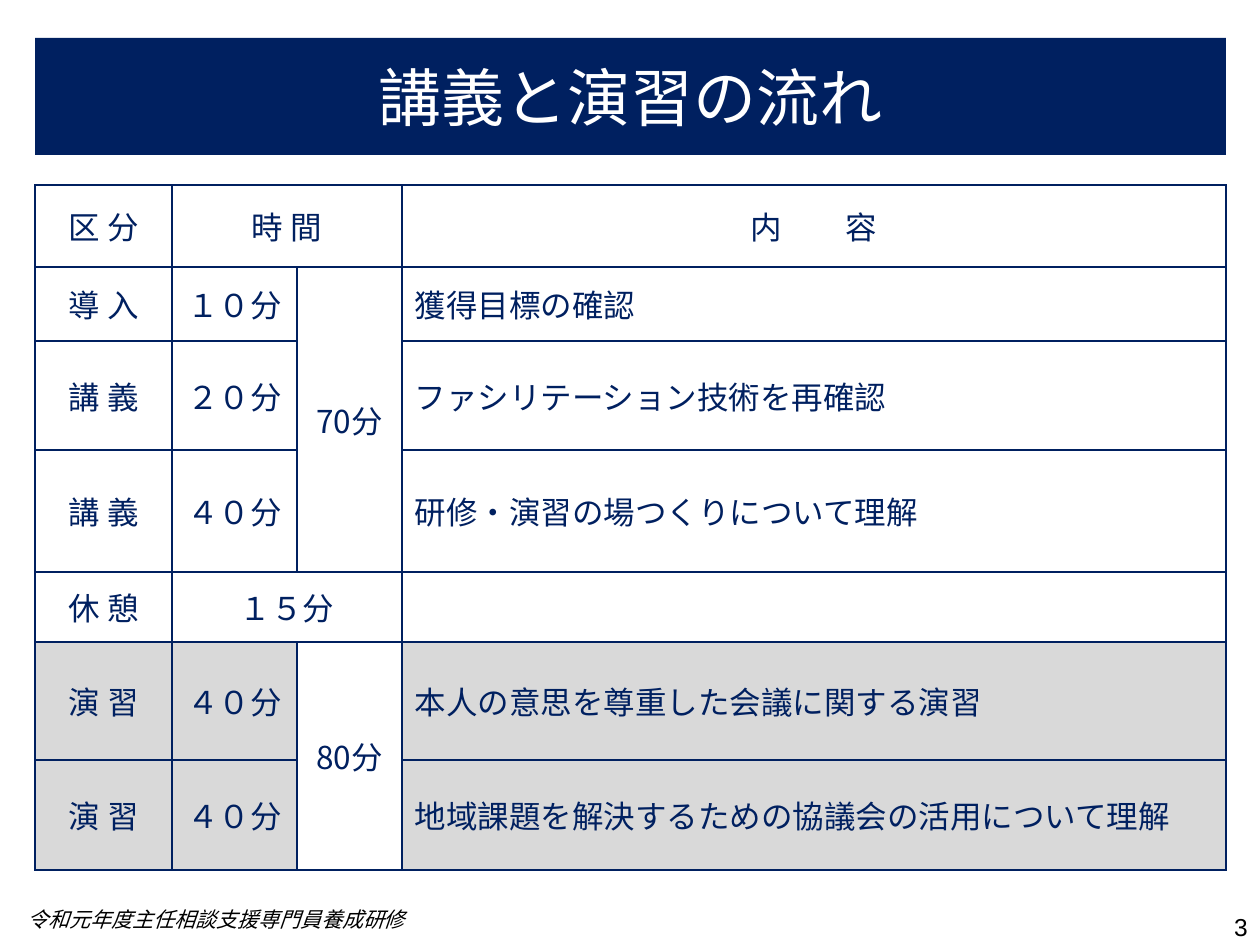
import pptx
import pptx.util
import pptx.dml.color
import pptx.enum.text
import pptx.oxml.ns
import lxml.etree

PX = 914400 / 126  # EMU per px
COLORS = {"navy": "002060", "white": "FFFFFF", "black": "000000", "gray": "D9D9D9"}
JAPANESE = "Noto Sans CJK JP"
ALIGN = pptx.enum.text.PP_ALIGN
MIDDLE = pptx.enum.text.MSO_ANCHOR.MIDDLE

COLUMNS = [137, 125, 105, 824]
ROWS = [82, 74, 109, 122, 70, 118, 110]
SCHEDULE = [
    ["区 分", "時 間", "", "内　　容"],
    ["導 入", "１０分", "70分", "獲得目標の確認"],
    ["講 義", "２０分", "", "ファシリテーション技術を再確認"],
    ["講 義", "４０分", "", "研修・演習の場つくりについて理解"],
    ["休 憩", "１５分", "", ""],
    ["演 習", "４０分", "80分", "本人の意思を尊重した会議に関する演習"],
    ["演 習", "４０分", "", "地域課題を解決するための協議会の活用について理解"],
]
MERGES = [((0, 1), (0, 2)), ((1, 2), (3, 2)), ((4, 1), (4, 2)), ((5, 2), (6, 2))]
TOTAL_COLUMN, CONTENT_COLUMN = 2, 3
FIRST_EXERCISE_ROW = 5


def emu(px):
    return round(px * PX)


def rgb(name):
    return pptx.dml.color.RGBColor.from_string(COLORS[name])


def write(frame, text, size, color, align=ALIGN.LEFT, font=JAPANESE, italic=False):
    frame.text = text
    paragraph = frame.paragraphs[0]
    paragraph.alignment = align
    for run in paragraph.runs:
        run.font.size = pptx.util.Pt(size)
        run.font.name = font
        run.font.bold = False
        run.font.italic = italic
        run.font.color.rgb = rgb(color)
        # East Asian typeface, which follows the Latin one
        properties = run._r.get_or_add_rPr()
        lxml.etree.SubElement(properties, pptx.oxml.ns.qn("a:ea"), typeface=font)


def add_borders(cell, color, width):
    properties = cell._tc.get_or_add_tcPr()
    for side in ("lnL", "lnR", "lnT", "lnB"):
        line = lxml.etree.SubElement(properties, pptx.oxml.ns.qn(f"a:{side}"),
                                     w=str(int(pptx.util.Pt(width))))
        fill = lxml.etree.SubElement(line, pptx.oxml.ns.qn("a:solidFill"))
        lxml.etree.SubElement(fill, pptx.oxml.ns.qn("a:srgbClr"), val=COLORS[color])


def place_title(slide, left, top, width, height):
    title = slide.shapes.title
    title.left, title.top = emu(left), emu(top)
    title.width, title.height = emu(width), emu(height)
    title.fill.solid()
    title.fill.fore_color.rgb = rgb("navy")
    title.text_frame.vertical_anchor = MIDDLE
    write(title.text_frame, "講義と演習の流れ", 36, "white", ALIGN.CENTER)


def add_schedule(slide, left, top):
    table = slide.shapes.add_table(
        len(ROWS), len(COLUMNS), emu(left), emu(top),
        emu(sum(COLUMNS)), emu(sum(ROWS))).table
    for column, width in zip(table.columns, COLUMNS):
        column.width = emu(width)
    for row, height in zip(table.rows, ROWS):
        row.height = emu(height)
    for start, end in MERGES:
        table.cell(*start).merge(table.cell(*end))

    for r, texts in enumerate(SCHEDULE):
        for c, text in enumerate(texts):
            cell = table.cell(r, c)
            add_borders(cell, "navy", 1)
            # Exercise rows are shaded, apart from their total time
            if r >= FIRST_EXERCISE_ROW and c != TOTAL_COLUMN:
                cell.fill.solid()
                cell.fill.fore_color.rgb = rgb("gray")
            else:
                cell.fill.background()
            cell.vertical_anchor = MIDDLE
            is_content = c == CONTENT_COLUMN and r > 0
            write(cell.text_frame, text, 18, "navy",
                  ALIGN.LEFT if is_content else ALIGN.CENTER)


def add_note(slide, left, top, width, height, text, size, **style):
    note = slide.shapes.add_textbox(emu(left), emu(top), emu(width), emu(height))
    note.text_frame.word_wrap = True
    write(note.text_frame, text, size, "black", **style)


def main():
    presentation = pptx.Presentation()
    presentation.slide_width, presentation.slide_height = emu(1260), emu(945)
    slide = presentation.slides.add_slide(presentation.slide_layouts[5])

    place_title(slide, 35, 38, 1191, 117)
    add_schedule(slide, 35, 185)

    # Footer: course name and page number
    add_note(slide, 15, 900, 496, 38, "令和元年度主任相談支援専門員養成研修", 12, italic=True)
    add_note(slide, 966, 906, 294, 37, "3", 14, align=ALIGN.RIGHT, font="Arial")

    presentation.save("out.pptx")


if __name__ == "__main__":
    main()
